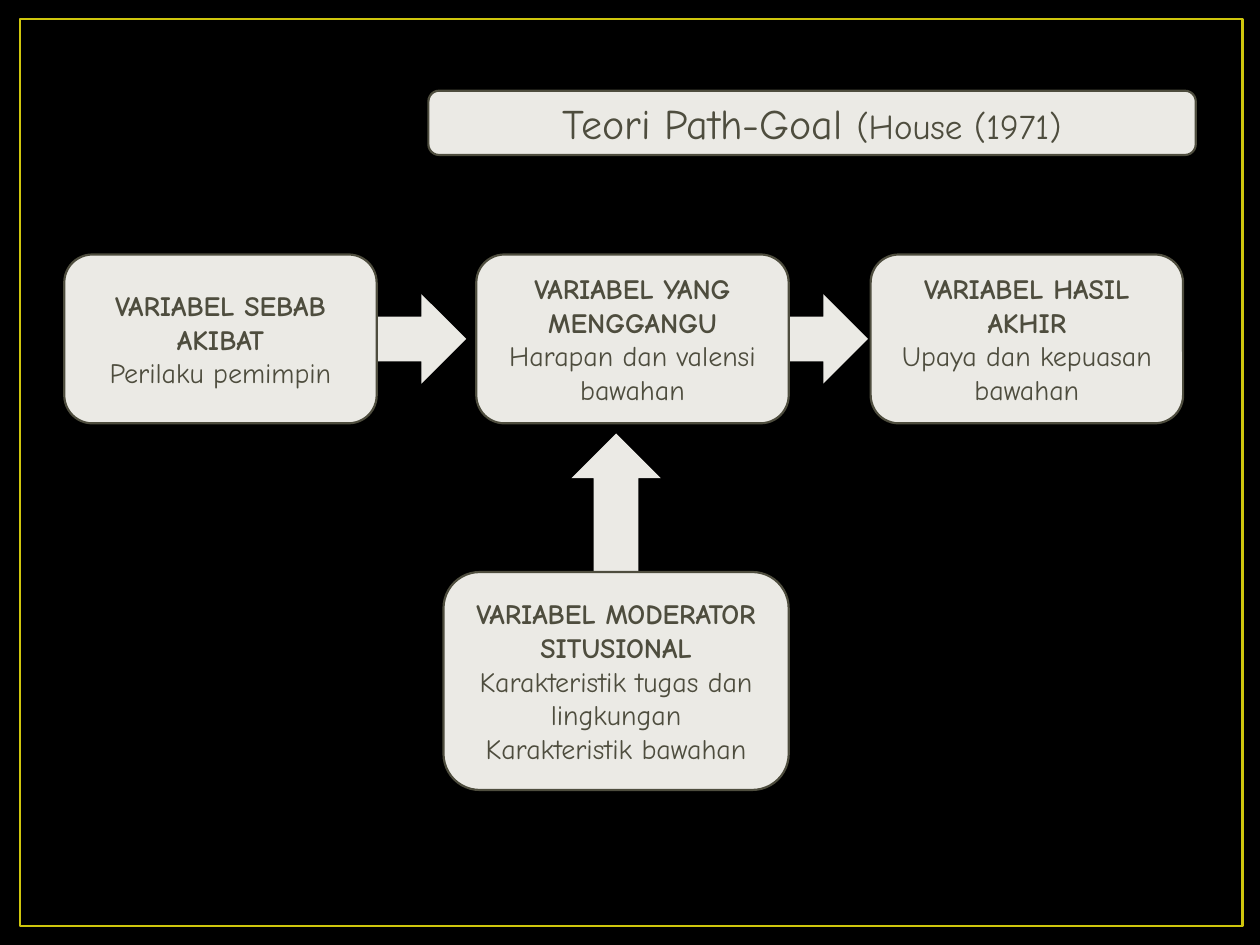
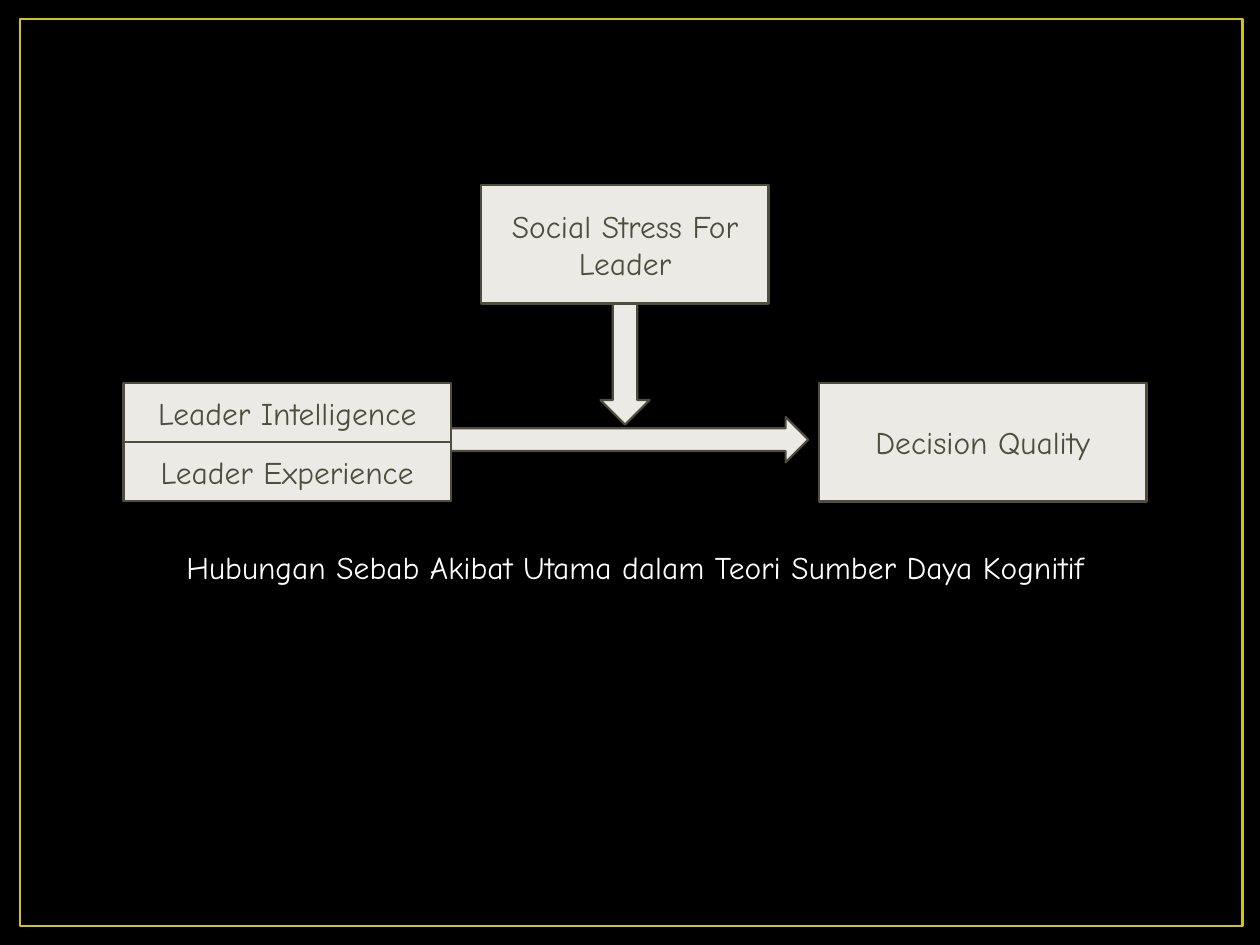
from pptx import Presentation
from pptx.dml.color import RGBColor
from pptx.enum.shapes import MSO_SHAPE
from pptx.enum.text import MSO_ANCHOR, MSO_AUTO_SIZE, PP_ALIGN
from pptx.util import Inches, Pt

BLACK = RGBColor(0x00, 0x00, 0x00)
WHITE = RGBColor(0xFF, 0xFF, 0xFF)
YELLOW = RGBColor(0xCF, 0xC6, 0x0D)
CREAM = RGBColor(0xEB, 0xEA, 0xE5)
OLIVE = RGBColor(0x4E, 0x4D, 0x3E)
FONT = "Comic Neue"
TITLE_ONLY, BLANK = 5, 6


def add_panel(slide, preset, left, top, width, height, fill=CREAM, line=OLIVE, weight=1.25):
    panel = slide.shapes.add_shape(
        preset, Inches(left), Inches(top), Inches(width), Inches(height))
    panel.shadow.inherit = False
    if fill is None:
        panel.fill.background()
    else:
        panel.fill.solid()
        panel.fill.fore_color.rgb = fill
    if line is None:
        panel.line.fill.background()
    else:
        panel.line.color.rgb = line
        panel.line.width = Pt(weight)
    return panel


def add_arrow(slide, center_x, center_y, length, thickness, rotation=0, line=OLIVE):
    arrow = add_panel(slide, MSO_SHAPE.RIGHT_ARROW, center_x - length / 2,
                      center_y - thickness / 2, length, thickness, line=line)
    arrow.rotation = rotation


def format_run(run, size, color=OLIVE, bold=False):
    run.font.name = FONT
    run.font.size = Pt(size)
    run.font.bold = bold
    run.font.color.rgb = color


def write_lines(frame, lines, size, color=OLIVE, bold_heading=False):
    """Write centred paragraphs, optionally with the first one in bold."""
    frame.word_wrap = True
    frame.vertical_anchor = MSO_ANCHOR.MIDDLE
    frame.text = "\n".join(lines)
    for index, paragraph in enumerate(frame.paragraphs):
        paragraph.alignment = PP_ALIGN.CENTER
        for run in paragraph.runs:
            format_run(run, size, color, bold_heading and index == 0)


def style_master(prs, slide):
    """Give every slide a black background and a yellow frame."""
    master = prs.slide_master
    master.background.fill.solid()
    master.background.fill.fore_color.rgb = BLACK
    frame = add_panel(slide, MSO_SHAPE.RECTANGLE, 0.16, 0.15, 9.7, 7.2,
                      fill=None, line=YELLOW, weight=1.5)
    frame.element.nvSpPr.cNvPr.set("id", "20")
    master.shapes.element.insert(2, frame.element)


def add_title(slide, left, top, width, height, name, source):
    add_panel(slide, MSO_SHAPE.ROUNDED_RECTANGLE, left, top, width, height)
    title = slide.shapes.title
    title.left, title.top = Inches(left), Inches(top)
    title.width, title.height = Inches(width), Inches(height)
    # The heading has to stay in front of its panel
    slide.shapes.element.append(title.element)
    frame = title.text_frame
    frame.auto_size = MSO_AUTO_SIZE.NONE
    write_lines(frame, [name], 24)
    format_run(frame.paragraphs[0].add_run(), 20)
    frame.paragraphs[0].runs[1].text = source


def add_path_goal_model(slide, left, top):
    box_width, box_height = 2.48, 1.34
    moderator_left, moderator_top, moderator_width = left + 3.01, top + 2.52, 2.74
    middle = top + box_height / 2
    for center_x, length in ((2.48, 1.42), (5.5, 1.76)):
        add_arrow(slide, left + center_x, middle, length, 0.71, line=None)
    add_arrow(slide, moderator_left + moderator_width / 2, top + 2.3, 1.76, 0.71,
              rotation=270, line=None)

    variables = [
        (left, ["VARIABEL SEBAB AKIBAT", "Perilaku pemimpin"]),
        (left + 3.27, ["VARIABEL YANG MENGGANGU", "Harapan dan valensi bawahan"]),
        (left + 6.4, ["VARIABEL HASIL AKHIR", "Upaya dan kepuasan bawahan"]),
    ]
    boxes = [(x, top, box_width, box_height, lines) for x, lines in variables]
    boxes.append((moderator_left, moderator_top, moderator_width, 1.73,
                  ["VARIABEL MODERATOR SITUSIONAL",
                   "Karakteristik tugas dan lingkungan",
                   "Karakteristik bawahan"]))
    for *place, lines in boxes:
        variable = add_panel(slide, MSO_SHAPE.ROUNDED_RECTANGLE, *place)
        write_lines(variable.text_frame, lines, 16, bold_heading=True)


def add_cognitive_resource_model(slide, left, top, width):
    side_width, stress_width = 2.6, 2.28
    full, half = 0.94, 0.47
    stress_left, factors_top = left + 2.84, top + 1.57
    add_arrow(slide, stress_left + stress_width / 2, top + 1.14, 1.52, 0.39, rotation=90)
    add_arrow(slide, left + 3.98, factors_top + 0.45, 2.91, 0.36)

    for x, y, box_width, height, label in (
        (left, factors_top, side_width, half, "Leader Intelligence"),
        (left, factors_top + half, side_width, half, "Leader Experience"),
        (stress_left, top, stress_width, full, "Social Stress For Leader"),
        (left + width - side_width, factors_top, side_width, full, "Decision Quality"),
    ):
        factor = add_panel(slide, MSO_SHAPE.RECTANGLE, x, y, box_width, height)
        write_lines(factor.text_frame, [label], 18)

    caption = slide.shapes.add_textbox(
        Inches(left), Inches(top + 2.83), Inches(width), Inches(0.4))
    write_lines(caption.text_frame,
                ["Hubungan Sebab Akibat Utama dalam Teori Sumber Daya Kognitif"],
                18, WHITE)
    caption.text_frame.vertical_anchor = MSO_ANCHOR.TOP


def main():
    prs = Presentation()
    prs.slide_width, prs.slide_height = Inches(10), Inches(7.5)

    path_goal = prs.slides.add_slide(prs.slide_layouts[TITLE_ONLY])
    style_master(prs, path_goal)
    add_path_goal_model(path_goal, 0.51, 2.02)
    add_title(path_goal, 3.4, 0.72, 6.09, 0.51, "Teori Path-Goal ", "(House (1971)")

    cognitive = prs.slides.add_slide(prs.slide_layouts[BLANK])
    add_cognitive_resource_model(cognitive, 0.98, 1.47, 8.12)

    prs.save("out.pptx")


if __name__ == "__main__":
    main()
